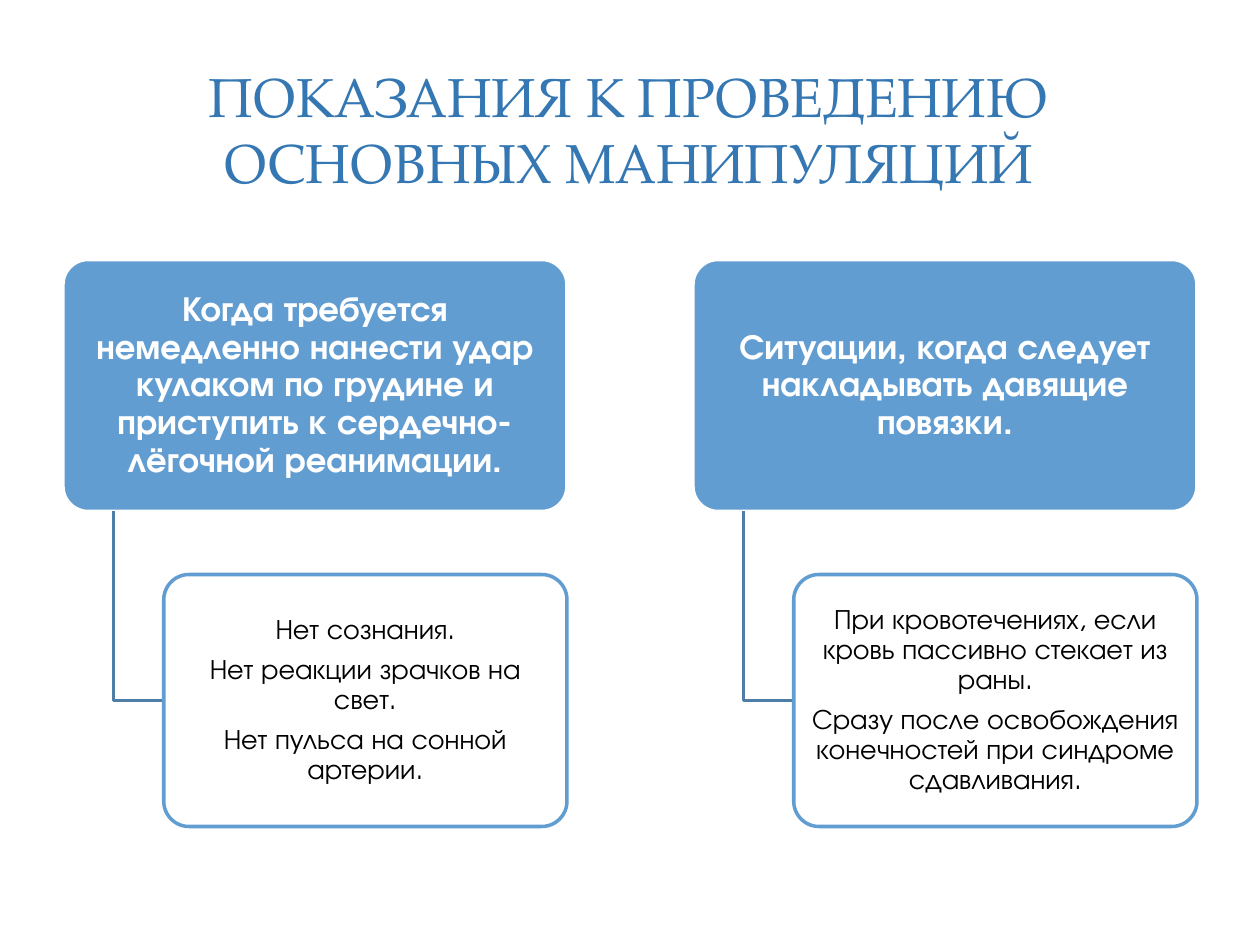
from pptx import Presentation
from pptx.dml.color import RGBColor
from pptx.enum.shapes import MSO_SHAPE
from pptx.enum.text import MSO_ANCHOR, MSO_AUTO_SIZE, PP_ALIGN
from pptx.util import Inches, Pt

HEADING_FONT = "TeX Gyre Pagella"
BODY_FONT = "TeX Gyre Adventor"
WHITE, BLACK = "FFFFFF", "000000"
BLUE, TITLE_BLUE, STEM_BLUE = "629DD1", "3477B2", "4E7EA7"
TREE_COLUMNS, TREE_ROWS = 10, 9

TREES = [
    (
        "Когда требуется немедленно нанести удар кулаком по грудине "
        "и приступить к сердечно-лёгочной реанимации.",
        [
            "Нет сознания.",
            "Нет реакции зрачков на свет.",
            "Нет пульса на сонной артерии.",
        ],
    ),
    (
        "Ситуации, когда следует накладывать давящие повязки.",
        [
            "При кровотечениях, если кровь пассивно стекает из раны.",
            "Сразу после освобождения конечностей при синдроме сдавливания.",
        ],
    ),
]


def color(hex_string):
    """Turn a hex string into a colour."""
    return RGBColor.from_string(hex_string)


def write(shape, paragraphs, *, size, font, ink, bold=False,
          spacing=None, after=0, inset=(0.1, 0.05)):
    """Fill a shape with centred, formatted paragraphs."""
    frame = shape.text_frame
    frame.word_wrap = True
    frame.auto_size = MSO_AUTO_SIZE.NONE
    frame.vertical_anchor = MSO_ANCHOR.MIDDLE
    frame.margin_left = frame.margin_right = Inches(inset[0])
    frame.margin_top = frame.margin_bottom = Inches(inset[1])
    frame.text = "\n".join(paragraphs)
    for paragraph in frame.paragraphs:
        paragraph.alignment = PP_ALIGN.CENTER
        paragraph.line_spacing = spacing
        paragraph.space_after = Pt(after)
        style = paragraph.runs[0].font
        style.size, style.name, style.bold = Pt(size), font, bold
        style.color.rgb = color(ink)


def add_card(slide, box, fill, outline):
    """Add a rounded card in the given box."""
    card = slide.shapes.add_shape(MSO_SHAPE.ROUNDED_RECTANGLE, *box)
    card.adjustments[0] = 0.1
    card.shadow.inherit = False
    card.fill.solid()
    card.fill.fore_color.rgb = color(fill)
    card.line.color.rgb = color(outline)
    card.line.width = Pt(2)
    return card


def add_stem(slide, points):
    """Draw an open bent line through the points."""
    builder = slide.shapes.build_freeform(*points[0])
    builder.add_line_segments(points[1:], close=False)
    stem = builder.convert_to_shape()
    stem.shadow.inherit = False
    stem.fill.background()
    stem.line.color.rgb = color(STEM_BLUE)
    stem.line.width = Pt(2)


def add_title(slide, box, text):
    """Place and format the title placeholder."""
    title = slide.shapes.title
    title.left, title.top, title.width, title.height = box
    write(title, [text], size=31.5, font=HEADING_FONT, ink=TITLE_BLUE)


def add_tree(slide, box, heading, details):
    """Lay out a heading, its stem and its details on the box's grid."""
    left, top, width, height = box
    column, row = width // TREE_COLUMNS, height // TREE_ROWS

    def at(x, y):
        return left + x * column, top + y * row

    head = add_card(slide, (*at(0, 0), 10 * column, 4 * row), BLUE, WHITE)
    write(head, [heading], size=20, font=BODY_FONT, ink=WHITE, bold=True,
          spacing=0.9, after=7, inset=(0.04, 0.03))
    add_stem(slide, [at(1, 4), at(1, 7), at(2, 7)])
    detail = add_card(slide, (*at(2, 5), 8 * column, 4 * row), WHITE, BLUE)
    write(detail, details, size=16, font=BODY_FONT, ink=BLACK,
          spacing=0.9, after=5.6, inset=(0.03, 0.02))


def main():
    """Build and save the slide."""
    deck = Presentation()
    deck.slide_width, deck.slide_height = Inches(10), Inches(7.5)
    slide = deck.slides.add_slide(deck.slide_layouts[5])
    title_box = [Inches(value) for value in (0.47, 0.45, 9.03, 1.14)]
    add_title(slide, title_box, "ПОКАЗАНИЯ К ПРОВЕДЕНИЮ ОСНОВНЫХ МАНИПУЛЯЦИЙ")
    half = deck.slide_width // len(TREES)
    for index, (heading, details) in enumerate(TREES):
        box = (index * half + half // 10, Inches(2.06),
               half * 8 // 10, Inches(4.5))
        add_tree(slide, box, heading, details)
    deck.save("out.pptx")


if __name__ == "__main__":
    main()
